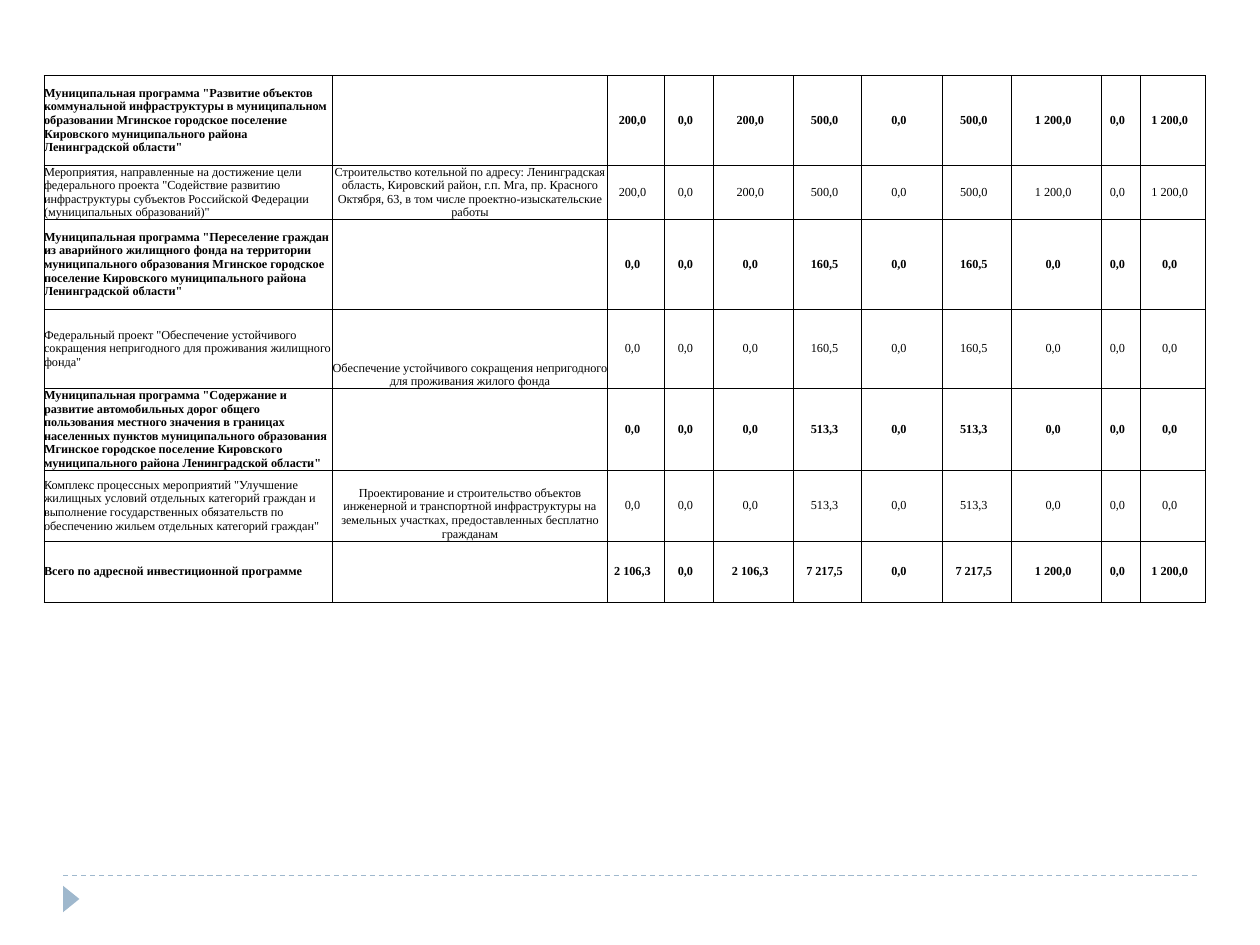
from dataclasses import dataclass

from lxml import etree
from pptx import Presentation, util as u
from pptx.dml.color import RGBColor
from pptx.enum import dml, shapes, text
from pptx.oxml.ns import qn


@dataclass(frozen=True)
class Theme:
    font: str = "Times New Roman"
    text_size: float = 7
    ink: str = "000000"
    paper: str = "FFFFFF"
    accent: str = "9FB8CD"
    border_width: float = 0.5
    rule_width: float = 0.75


COLUMN_WIDTHS = [2.29, 2.18, 0.45, 0.39, 0.64, 0.54, 0.64, 0.55, 0.71, 0.31, 0.52]
ROW_HEIGHTS = [0.71, 0.4, 0.71, 0.63, 0.63, 0.56, 0.49]
VALUE_RIGHT_INSET = 0.05
MIDDLE, BOTTOM = text.MSO_ANCHOR.MIDDLE, text.MSO_ANCHOR.BOTTOM

# Name, its anchor, object, and the total of each of the three years
PROGRAMMES = [
    ('Муниципальная программа "Развитие объектов коммунальной инфраструктуры '
     'в муниципальном образовании Мгинское городское поселение Кировского '
     'муниципального района Ленинградской области"', MIDDLE,
     "", ("200,0", "500,0", "1 200,0")),
    ('Мероприятия, направленные на достижение цели федерального проекта '
     '"Содействие развитию инфраструктуры субъектов Российской Федерации '
     '(муниципальных образований)"', MIDDLE,
     "Строительство котельной по адресу: Ленинградская область, Кировский район, "
     "г.п. Мга, пр. Красного Октября, 63, в том числе проектно-изыскательские работы",
     ("200,0", "500,0", "1 200,0")),
    ('Муниципальная программа "Переселение граждан из аварийного жилищного фонда '
     'на территории муниципального образования Мгинское городское поселение '
     'Кировского муниципального района Ленинградской области"', MIDDLE,
     "", ("0,0", "160,5", "0,0")),
    ('Федеральный проект "Обеспечение устойчивого сокращения непригодного для '
     'проживания жилищного фонда"', MIDDLE,
     "Обеспечение устойчивого сокращения непригодного для проживания жилого фонда",
     ("0,0", "160,5", "0,0")),
    ('Муниципальная программа "Содержание и развитие автомобильных дорог общего '
     'пользования местного значения в границах населенных пунктов муниципального '
     'образования Мгинское городское поселение Кировского муниципального района '
     'Ленинградской области"', BOTTOM,
     "", ("0,0", "513,3", "0,0")),
    ('Комплекс процессных мероприятий "Улучшение жилищных условий отдельных '
     'категорий граждан и выполнение государственных обязательств по обеспечению '
     'жильем отдельных категорий граждан"', MIDDLE,
     "Проектирование и строительство объектов инженерной и транспортной "
     "инфраструктуры на земельных участках, предоставленных бесплатно гражданам",
     ("0,0", "513,3", "0,0")),
    ("Всего по адресной инвестиционной программе", MIDDLE,
     "", ("2 106,3", "7 217,5", "1 200,0")),
]


class SlideBuilder:
    def __init__(self, slide, theme):
        self.slide = slide
        self.theme = theme

    def dashed_rule(self, left, right, top):
        rule = self.slide.shapes.add_connector(
            shapes.MSO_CONNECTOR.STRAIGHT,
            u.Inches(left), u.Inches(top), u.Inches(right), u.Inches(top))
        rule.line.color.rgb = RGBColor.from_string(self.theme.accent)
        rule.line.width = u.Pt(self.theme.rule_width)
        rule.line.dash_style = dml.MSO_LINE.DASH
        etree.SubElement(rule._element.spPr, qn("a:effectLst"))

    def pointer(self, left, top, width, height):
        """Triangle turned to point right."""
        shape = self.slide.shapes.add_shape(
            shapes.MSO_SHAPE.ISOSCELES_TRIANGLE,
            u.Inches(left), u.Inches(top), u.Inches(width), u.Inches(height))
        shape.rotation = 90
        shape.shadow.inherit = False
        shape.fill.solid()
        shape.fill.fore_color.rgb = RGBColor.from_string(self.theme.accent)
        shape.line.fill.background()

    def table(self, left, top, widths, heights):
        table = self.slide.shapes.add_table(
            len(heights), len(widths), u.Inches(left), u.Inches(top),
            u.Inches(sum(widths)), u.Inches(sum(heights))).table
        table.first_row = table.horz_banding = False
        for column, width in zip(table.columns, widths):
            column.width = u.Inches(width)
        for row, height in zip(table.rows, heights):
            row.height = u.Inches(height)
        return table

    def cell(self, cell, words, bold, anchor=MIDDLE,
             alignment=text.PP_ALIGN.CENTER, right_inset=0):
        self.cell_borders(cell)
        cell.fill.solid()
        cell.fill.fore_color.rgb = RGBColor.from_string(self.theme.paper)
        cell.margin_left = cell.margin_top = cell.margin_bottom = 0
        cell.margin_right = u.Inches(right_inset)
        cell.vertical_anchor = anchor
        if not words:
            return
        paragraph = cell.text_frame.paragraphs[0]
        paragraph.alignment = alignment
        run = paragraph.add_run()
        run.text = words
        run.font.name = self.theme.font
        run.font.size = u.Pt(self.theme.text_size)
        run.font.bold = bold
        run.font.color.rgb = RGBColor.from_string(self.theme.ink)

    def cell_borders(self, cell):
        properties = cell._tc.get_or_add_tcPr()
        for side in ("lnL", "lnR", "lnT", "lnB"):
            border = etree.SubElement(properties, qn(f"a:{side}"),
                                      w=str(u.Pt(self.theme.border_width)))
            fill = etree.SubElement(border, qn("a:solidFill"))
            etree.SubElement(fill, qn("a:srgbClr"), val=self.theme.ink)


def main():
    presentation = Presentation()
    presentation.slide_width = u.Inches(10)
    presentation.slide_height = u.Inches(7.5)
    slide = presentation.slides.add_slide(presentation.slide_layouts[6])
    builder = SlideBuilder(slide, Theme())

    builder.dashed_rule(0.5, 9.5, 6.95)
    builder.pointer(0.46, 7.07, 0.21, 0.13)

    table = builder.table(0.35, 0.6, COLUMN_WIDTHS, ROW_HEIGHTS)
    for row, (name, anchor, project, totals) in enumerate(PROGRAMMES):
        bold = not project
        builder.cell(table.cell(row, 0), name, bold, anchor, text.PP_ALIGN.LEFT)
        builder.cell(table.cell(row, 1), project, bold, BOTTOM)
        values = [value for total in totals for value in (total, "0,0", total)]
        for column, value in enumerate(values, start=2):
            builder.cell(table.cell(row, column), value, bold,
                         right_inset=VALUE_RIGHT_INSET)

    presentation.save("out.pptx")


if __name__ == "__main__":
    main()
